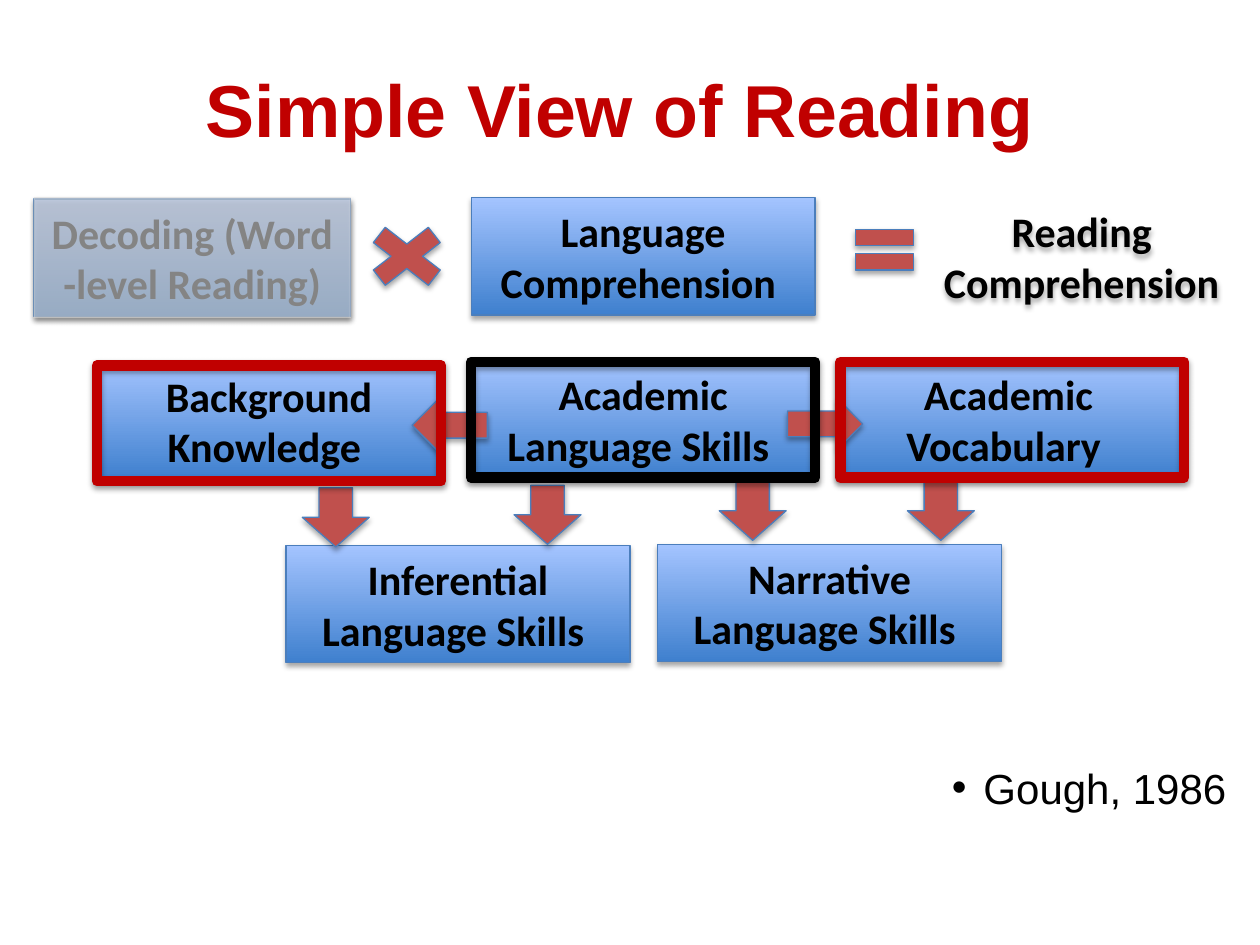
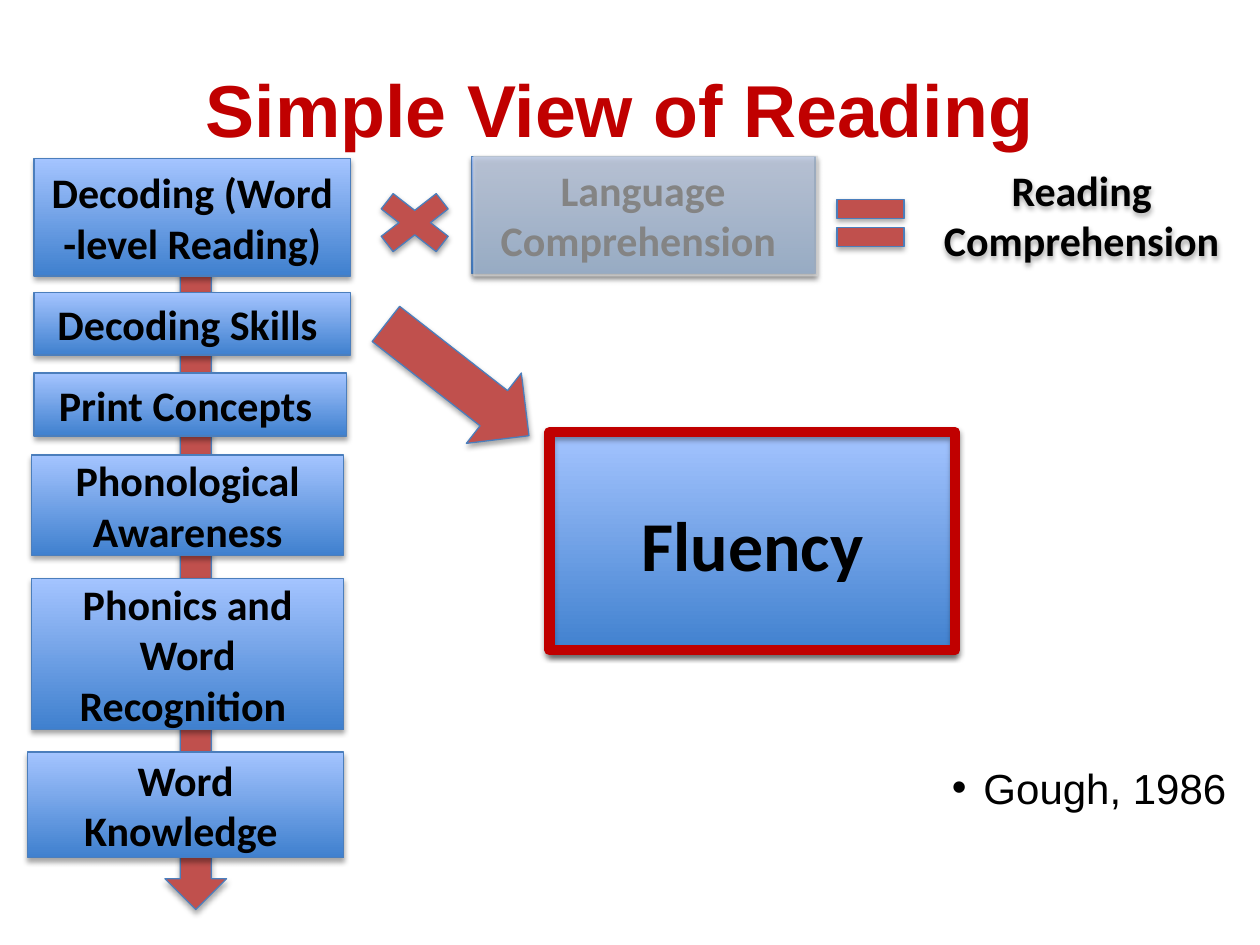
import dataclasses

import lxml.etree
import pptx
import pptx.dml.color
import pptx.enum.shapes
import pptx.enum.text
import pptx.oxml.ns
import pptx.util

Pt = pptx.util.Pt
qn = pptx.oxml.ns.qn
Preset = pptx.enum.shapes.MSO_SHAPE
Align = pptx.enum.text.PP_ALIGN
Anchor = pptx.enum.text.MSO_ANCHOR


@dataclasses.dataclass(frozen=True)
class Theme:
    """Colours, fonts and type sizes shared by both slides."""
    red: str = "C00000"
    black: str = "000000"
    arrow: str = "C0504D"
    outline: str = "4B7EBC"
    box_top: str = "A4C4FF"
    box_bottom: str = "3F80CE"
    veil: str = "D9D9D9"
    heading_font: str = "Arial"
    box_font: str = "Calibri"
    title_size: float = 42
    text_size: float = 24
    feature_size: float = 40
    thin_line: float = 0.75
    frame_line: float = 6


def rgb(value):
    return pptx.dml.color.RGBColor.from_string(value)


def add_child(parent, tag, **attributes):
    return lxml.etree.SubElement(parent, qn(tag), **attributes)


class Deck:
    """Holds the theme and the current slide."""

    def __init__(self, theme):
        self.theme = theme
        self.presentation = pptx.Presentation()
        self.presentation.slide_width = Pt(720)
        self.presentation.slide_height = Pt(540)
        self.slide = None

    # Slide frame: title and citation
    def start_slide(self, title, citation):
        layout = self.presentation.slide_layouts[1]
        self.slide = self.presentation.slides.add_slide(layout)
        heading = self.slide.shapes.title
        self.place(heading, 36, 36, 648, 51)
        frame = heading.text_frame
        frame.margin_left = frame.margin_right = 0
        frame.margin_top = frame.margin_bottom = 0
        self.add_text(frame, [title], self.theme.title_size, Align.CENTER,
                      self.theme.heading_font, self.theme.red, True)

        body = self.slide.placeholders[1]
        self.place(body, 12, 432, 696, 18)
        frame = body.text_frame
        frame.auto_size = pptx.enum.text.MSO_AUTO_SIZE.NONE
        paragraph = frame.paragraphs[0]
        properties = paragraph._p.get_or_add_pPr()
        properties.set("marL", str(Pt(18)))
        properties.set("indent", str(-Pt(18)))
        add_child(properties, "a:buChar", char="•")
        paragraph.space_before = Pt(0)
        self.add_text(frame, [citation], self.theme.text_size, Align.RIGHT,
                      self.theme.heading_font, self.theme.black, False)

    def place(self, shape, left, top, width, height):
        shape.left, shape.top = Pt(left), Pt(top)
        shape.width, shape.height = Pt(width), Pt(height)

    def add_text(self, frame, lines, size, alignment, font, color, bold):
        frame.word_wrap = True
        for index, line in enumerate(lines):
            paragraph = frame.paragraphs[0] if index == 0 else frame.add_paragraph()
            paragraph.alignment = alignment
            run = paragraph.add_run()
            run.text = line
            run.font.name = font
            run.font.size = Pt(size)
            run.font.bold = bold
            run.font.color.rgb = rgb(color)

    def label(self, shape, lines, size=None):
        shape.text_frame.vertical_anchor = Anchor.MIDDLE
        self.add_text(shape.text_frame, lines, size or self.theme.text_size,
                      Align.CENTER, self.theme.box_font, self.theme.black, True)

    def cast_shadow(self, shape):
        shape.shadow.inherit = False
        effects = shape._element.spPr.find(qn("a:effectLst"))
        shadow = add_child(effects, "a:outerShdw", blurRad=str(Pt(3.1)),
                           dist=str(Pt(1.8)), dir="5400000", rotWithShape="0")
        color = add_child(shadow, "a:srgbClr", val=self.theme.black)
        add_child(color, "a:alpha", val="35000")

    def preset(self, kind, at, color, line_color, line_width, rotation=0):
        left, top, width, height = map(Pt, at)
        shape = self.slide.shapes.add_shape(kind, left, top, width, height)
        shape.rotation = rotation
        if color:
            shape.fill.solid()
            shape.fill.fore_color.rgb = rgb(color)
        else:
            shape.fill.background()
        shape.line.color.rgb = rgb(line_color)
        shape.line.width = Pt(line_width)
        self.cast_shadow(shape)
        return shape

    def symbol(self, kind, at, rotation=0):
        """Red arrow or operator."""
        self.preset(kind, at, self.theme.arrow, self.theme.outline,
                    self.theme.thin_line, rotation)

    def box(self, lines, at, size=None):
        """Blue gradient box with a bold label."""
        theme = self.theme
        shape = self.preset(Preset.RECTANGLE, at, None, theme.outline, theme.thin_line)
        shape.fill.gradient()
        shape.fill.gradient_angle = 90
        colors = (theme.box_bottom, theme.box_top)
        for position, (stop, color) in enumerate(zip(shape.fill.gradient_stops, colors)):
            stop.position = position
            stop.color.rgb = rgb(color)
        self.label(shape, lines, size)

    def frame(self, at, color):
        """Thick outline with rounded joins."""
        shape = self.preset(Preset.RECTANGLE, at, None, color, self.theme.frame_line)
        add_child(shape.line._ln, "a:round")

    def veil(self, at):
        """Translucent grey cover that dims a box."""
        theme = self.theme
        shape = self.preset(Preset.RECTANGLE, at, theme.veil, theme.veil, theme.thin_line)
        for parent, alpha in ((shape._element.spPr, "61000"), (shape.line._ln, "42000")):
            color = parent.find(qn("a:solidFill")).find(qn("a:srgbClr"))
            add_child(color, "a:alpha", val=alpha)

    def formula(self, top, decoding_top, multiply_at, equals_at):
        """Decoding x language comprehension = reading comprehension."""
        self.box(["Decoding (Word -level Reading)"], (19.5, decoding_top, 180.75, 67))
        self.box(["Language Comprehension "], (269.25, top, 196.5, 67))
        self.symbol(Preset.MATH_MULTIPLY, multiply_at)
        self.symbol(Preset.MATH_EQUAL, equals_at)
        result = self.slide.shapes.add_textbox(Pt(527.75), Pt(top), Pt(180.75), Pt(67))
        self.label(result, ["Reading Comprehension"])
        self.cast_shadow(result)


def language_slide(deck):
    deck.formula(113, 113.75, (202.25, 123, 60.5, 47), (483, 123, 44.75, 39.5))
    deck.veil((19.5, 113, 180.75, 68.5))

    # Language skills
    skills = [
        ("Academic Language Skills ", 269.25, 206),
        ("Background Knowledge ", 55.5, 206.75),
        ("Academic Vocabulary ", 478, 206),
        ("Inferential Language Skills ", 163.5, 311.75),
        ("Narrative Language Skills ", 375.75, 311),
    ]
    for text, left, top in skills:
        deck.box([text], (left, top, 196.5, 67))

    # Arrows between the skills
    deck.symbol(Preset.LEFT_ARROW, (235.5, 228.25, 43, 29.5))
    deck.symbol(Preset.LEFT_ARROW, (450, 227.5, 43, 29.5), 180)
    for left, top in ((172.75, 278.75), (293.75, 277.25), (411, 275), (518.5, 275)):
        deck.symbol(Preset.DOWN_ARROW, (left, top, 38.25, 33.75))

    # Highlight frames
    theme = deck.theme
    for left, top, color in ((269.25, 206.75, theme.black), (55.5, 208.75, theme.red),
                             (480.25, 206.75, theme.red)):
        deck.frame((left, top, 196.5, 66.25), color)


def decoding_slide(deck):
    deck.symbol(Preset.DOWN_ARROW, (94.25, 137.5, 35.25, 382.25))
    deck.formula(89.25, 90.75, (206.75, 103.75, 60.5, 47), (471.5, 104.5, 52, 46))
    deck.veil((270.75, 89.25, 196.5, 68.5))

    # Chain of decoding skills
    chain = [
        (["Decoding Skills "], (19.5, 167, 180.75, 36)),
        (["Print Concepts "], (19.5, 213.25, 178.5, 36)),
        (["Phonological", "Awareness"], (18, 260, 178.5, 57.5)),
        (["Phonics and Word Recognition "], (18, 330.5, 178.5, 86.5)),
        (["Word Knowledge "], (15.75, 429.75, 180.75, 60.5)),
    ]
    for lines, at in chain:
        deck.box(lines, at)

    # Fluency as the outcome
    deck.symbol(Preset.LEFT_ARROW, (209.5, 191.5, 103.75, 51), 218)
    deck.box(["Fluency"], (314, 247, 231.75, 126.75), deck.theme.feature_size)
    deck.frame((314, 247, 231.75, 124.5), deck.theme.red)


def main():
    deck = Deck(Theme())
    for build in (language_slide, decoding_slide):
        deck.start_slide("Simple View of Reading ", "Gough, 1986")
        build(deck)
    deck.presentation.save("out.pptx")


if __name__ == "__main__":
    main()
